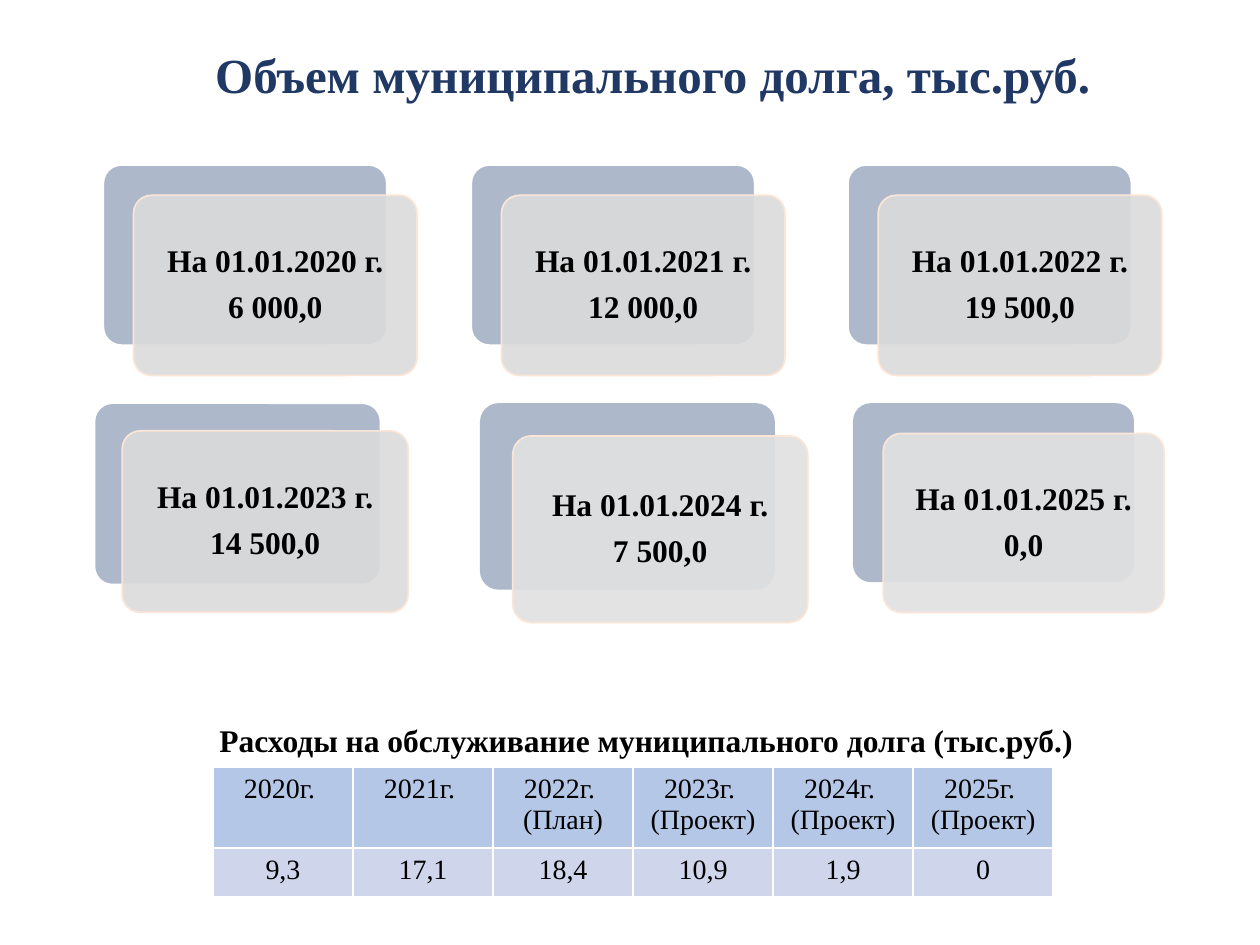
from pptx import Presentation
from pptx.dml.color import RGBColor
from pptx.enum.shapes import MSO_SHAPE
from pptx.enum.text import MSO_ANCHOR, PP_ALIGN
from pptx.oxml.ns import qn
from pptx.util import Inches, Pt
from lxml.etree import SubElement

FONT = "Times New Roman"
HUES = {
    "title": "203864", "text": "000000", "back": "ADB9CA", "past": "DBDBDB",
    "plan": "E1E1E1", "edge": "FBE5D6", "white": "FFFFFF",
    "head": "B4C7E7", "body": "CFD5EA",
}
TITLE = "Объем муниципального долга, тыс.руб."
CAPTION = "Расходы на обслуживание муниципального долга (тыс.руб.)"

# year, debt, tone, left, top, width, height, shift
CARDS = [
    (2020, "6 000,0", "past", 0.82, 1.31, 2.25, 1.43, 0.24),
    (2021, "12 000,0", "past", 3.74, 1.31, 2.25, 1.43, 0.24),
    (2022, "19 500,0", "past", 6.73, 1.31, 2.25, 1.43, 0.24),
    (2023, "14 500,0", "past", 0.75, 3.2, 2.27, 1.44, 0.22),
    (2024, "7 500,0", "plan", 3.81, 3.2, 2.34, 1.48, 0.26),
    (2025, "0,0", "plan", 6.77, 3.2, 2.23, 1.42, 0.24),
]
COSTS = [
    ("2020г. ", "9,3"),
    ("2021г. ", "17,1"),
    ("2022г. \n(План)", "18,4"),
    ("2023г. \n(Проект)", "10,9"),
    ("2024г. \n(Проект)", "1,9"),
    ("2025г. \n(Проект)", "0"),
]
ROWS = [("head", 0.64), ("body", 0.39)]


def color(key):
    return RGBColor.from_string(HUES[key])


def write(frame, text, size, bold=True, hue="text"):
    frame.text = text
    for par in frame.paragraphs:
        par.alignment = PP_ALIGN.CENTER
        font = par.font
        font.name, font.size, font.bold = FONT, Pt(size), bold
        font.color.rgb = color(hue)


def panel(slide, box, fill, edge):
    shape = slide.shapes.add_shape(MSO_SHAPE.ROUNDED_RECTANGLE, *map(Inches, box))
    shape.adjustments[0] = 0.1
    shape.shadow.inherit = False
    shape.fill.solid()
    shape.fill.fore_color.rgb = color(fill)
    if edge:
        shape.line.color.rgb = color(edge)
        shape.line.width = Pt(1)
    else:
        shape.line.fill.background()
    return shape


def add_card(slide, year, debt, tone, left, top, width, height, shift):
    edge = "white" if tone == "past" else None
    panel(slide, (left, top, width, height), "back", edge)
    front = panel(slide, (left + shift, top + shift, width, height), tone, "edge")
    tint = front.fill._xPr.find(qn("a:solidFill"))[0]
    SubElement(tint, qn("a:alpha"), val="90000")
    frame = front.text_frame
    frame.word_wrap = True
    frame.vertical_anchor = MSO_ANCHOR.MIDDLE
    frame.margin_left = frame.margin_right = Inches(0.07)
    frame.margin_top = frame.margin_bottom = Inches(0.07)
    write(frame, f"На 01.01.{year} г.\n{debt}", 18)
    for par in frame.paragraphs:
        par.line_spacing = 0.9
        par.space_after = Pt(7)


def add_edges(cell):
    props = cell._tc.get_or_add_tcPr()
    for side in ("lnL", "lnR", "lnT", "lnB"):
        line = SubElement(props, qn(f"a:{side}"), w=str(Pt(1)))
        fill = SubElement(line, qn("a:solidFill"))
        SubElement(fill, qn("a:srgbClr"), val=HUES["white"])


def add_costs(slide):
    box = map(Inches, (1.69, 6.09, 6.67, 1.03))
    table = slide.shapes.add_table(len(ROWS), len(COSTS), *box).table
    table.first_row = table.horz_banding = False
    for r, (hue, height) in enumerate(ROWS):
        table.rows[r].height = Inches(height)
        for c, pair in enumerate(COSTS):
            cell = table.cell(r, c)
            add_edges(cell)
            cell.fill.solid()
            cell.fill.fore_color.rgb = color(hue)
            write(cell.text_frame, pair[r], 16, bold=False)


def main():
    deck = Presentation()
    deck.slide_width, deck.slide_height = Inches(10), Inches(7.5)
    slide = deck.slides.add_slide(deck.slide_layouts[5])

    title = slide.shapes.title
    title.left, title.top = Inches(1.57), Inches(0.3)
    title.width, title.height = Inches(7.22), Inches(0.57)
    title.text_frame.word_wrap = False
    title.text_frame.vertical_anchor = MSO_ANCHOR.TOP
    write(title.text_frame, TITLE, 28, hue="title")

    for card in CARDS:
        add_card(slide, *card)

    add_costs(slide)
    label = slide.shapes.add_textbox(*map(Inches, (1.46, 5.67, 7.34, 0.4)))
    label.text_frame.word_wrap = True
    write(label.text_frame, CAPTION, 18)

    deck.save("out.pptx")


if __name__ == "__main__":
    main()
